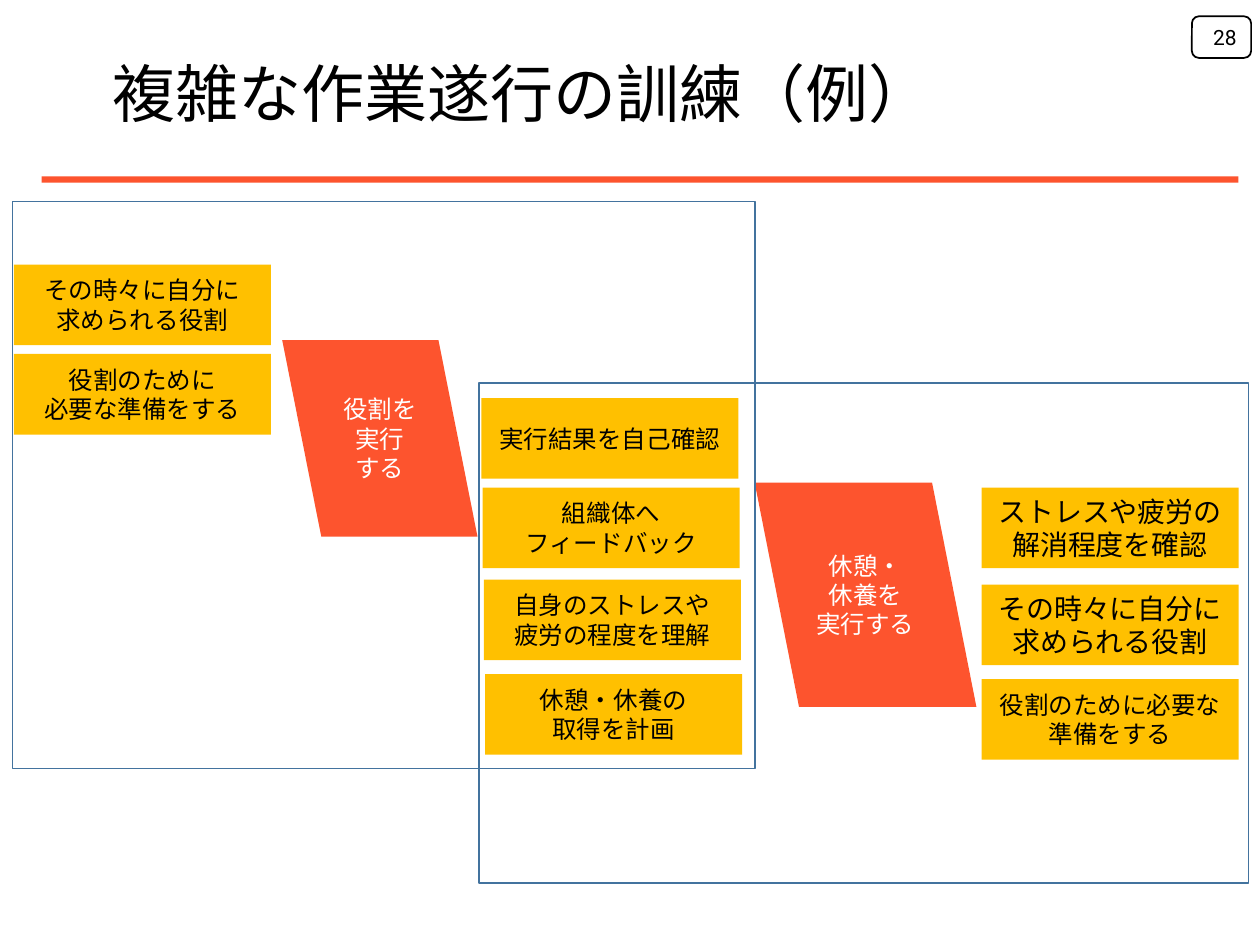
from lxml.etree import SubElement
from pptx import Presentation
from pptx.dml.color import RGBColor
from pptx.enum.shapes import MSO_SHAPE as Kind
from pptx.enum.text import MSO_ANCHOR as Anchor, PP_ALIGN as Align
from pptx.oxml.ns import qn
from pptx.util import Inches, Pt

SANS = "Noto Sans CJK JP"
GOLD = "FFC000"
RED = "FD542E"
BLUE = "43739E"
BLACK = "000000"
WHITE = "FFFFFF"

LEFT = [
    (0.11, 2.1, "その時々に自分に\n求められる役割", 14),
    (0.11, 2.81, "役割のために\n必要な準備をする", 14),
]
MIDDLE = [
    (3.82, 3.16, "実行結果を自己確認", 14),
    (3.83, 3.87, "組織体へ\nフィードバック", 14),
    (3.84, 4.6, "自身のストレスや\n疲労の程度を理解", 14),
    (3.85, 5.35, "休憩・休養の\n取得を計画", 14),
]
RIGHT = [
    (7.79, 3.87, "ストレスや疲労の解消程度を確認", 16),
    (7.79, 4.64, "その時々に自分に求められる役割", 16),
    (7.79, 5.39, "役割のために必要な準備をする", 14),
]


def color(code):
    return RGBColor.from_string(code)


def write(shape, text, size, ink=BLACK, align=Align.CENTER, anchor=Anchor.MIDDLE, face=SANS):
    frame = shape.text_frame
    frame.word_wrap = True
    frame.vertical_anchor = anchor
    frame.text = text
    for para in frame.paragraphs:
        para.alignment = align
        font = para.font
        font.size = Pt(size)
        font.color.rgb = color(ink)
        font.name = face
        SubElement(font._element, qn("a:ea")).set("typeface", face)


def draw(slide, kind, box, fill=None, line=None):
    shape = slide.shapes.add_shape(kind, *map(Inches, box))
    shape.shadow.inherit = False
    if fill:
        shape.fill.solid()
        shape.fill.fore_color.rgb = color(fill)
    else:
        shape.fill.background()
    if line:
        shape.line.color.rgb = color(line)
        shape.line.width = Pt(1)
    else:
        shape.line.fill.background()
    return shape


def add_title(slide, text):
    title = slide.shapes.title
    title.left, title.top = Inches(0.79), Inches(0.38)
    title.width, title.height = Inches(9.12), Inches(0.71)
    write(title, text, 36, align=Align.LEFT, anchor=Anchor.TOP)


def add_card(slide, left, top, text, size):
    card = draw(slide, Kind.RECTANGLE, (left, top, 2.04, 0.64), GOLD)
    write(card, text, size)


def add_step(slide, box, text):
    step = draw(slide, Kind.FLOWCHART_DATA, box, RED)
    step._element.spPr.xfrm.set("flipH", "1")
    write(step, text, 14, WHITE)


def add_number(slide, text):
    badge = draw(slide, Kind.ROUNDED_RECTANGLE, (9.46, 0.13, 0.47, 0.33), WHITE, BLACK)
    write(badge, text, 12, align=Align.RIGHT, face="Roboto")


def main():
    deck = Presentation()
    deck.slide_width, deck.slide_height = Inches(10), Inches(7.5)
    slide = deck.slides.add_slide(deck.slide_layouts[5])
    add_title(slide, "複雑な作業遂行の訓練（例）")
    draw(slide, Kind.RECTANGLE, (0.33, 1.4, 9.5, 0.05), RED)
    for card in LEFT + MIDDLE + RIGHT:
        add_card(slide, *card)
    add_step(slide, (2.24, 2.7, 1.55, 1.56), "役割を実行\nする")
    add_step(slide, (5.99, 3.83, 1.76, 1.78), "休憩・\n休養を\n実行する")
    for box in ((0.1, 1.6, 5.89, 4.5), (3.8, 3.04, 6.11, 3.97)):
        draw(slide, Kind.RECTANGLE, box, line=BLUE)
    add_number(slide, "28")
    deck.save("out.pptx")


if __name__ == "__main__":
    main()
